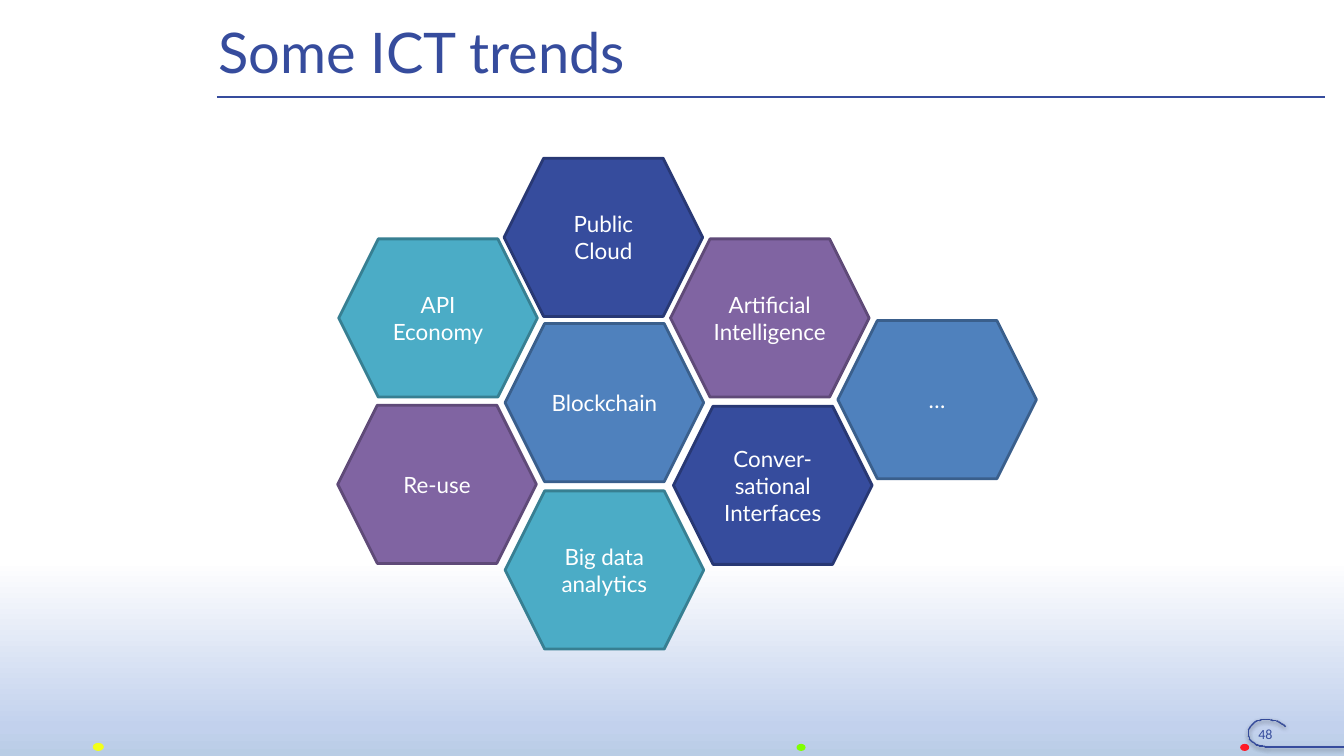
from dataclasses import dataclass
from itertools import pairwise
from pptx import Presentation
from pptx.dml.color import RGBColor
from pptx.enum.shapes import MSO_CONNECTOR as Connector, MSO_SHAPE as Preset
from pptx.enum.text import MSO_ANCHOR as Anchor, PP_ALIGN as Align
from pptx.oxml import parse_xml
from pptx.oxml.ns import nsdecls, qn
from pptx.util import Inches, Pt


@dataclass(frozen=True)
class Theme:
    navy: str = "364C9D"
    navy_edge: str = "283874"
    teal: str = "4BACC6"
    teal_edge: str = "377F92"
    blue: str = "4F81BD"
    blue_edge: str = "3A5F8C"
    purple: str = "8064A2"
    purple_edge: str = "5F4A78"
    white: str = "FFFFFF"
    red: str = "FF1A26"
    green: str = "80FF00"
    yellow: str = "F2FF1A"
    shadow: str = "000000"
    fade: tuple = ((0, "B9CDE5"), (15, "C2D1ED"), (100, "FFFFFF"))
    font: str = "Lato"
    number_font: str = "Calibri"
    title_size: int = 40
    label_size: int = 16
    number_size: int = 10


theme = Theme()


def style_text(para, size, color, font, align):
    para.alignment = align
    para.font.size = Pt(size)
    para.font.name = font
    para.font.color.rgb = RGBColor.from_string(color)


def add_solid(preset, left, top, width, height, fill):
    shape = page.shapes.add_shape(
        preset, Inches(left), Inches(top), Inches(width), Inches(height))
    shape.shadow.inherit = False
    shape.fill.solid()
    shape.fill.fore_color.rgb = RGBColor.from_string(fill)
    shape.line.fill.background()
    return shape


deck = Presentation()
deck.slide_width = Inches(13.33)
deck.slide_height = Inches(7.5)
page = deck.slides.add_slide(deck.slide_layouts[5])

fade = add_solid(Preset.RECTANGLE, 0, 5.56, 13.33, 1.94, theme.white)
fade.fill.gradient()
fade.fill.gradient_angle = 90
stops = fade._element.spPr.find(qn("a:gradFill")).find(qn("a:gsLst"))
stops.clear()
for position, color in theme.fade:
    stops.append(parse_xml(
        f'<a:gs {nsdecls("a")} pos="{position * 1000}"><a:srgbClr val="{color}"/></a:gs>'))

for left, top, width, height, color in (
    (12.3, 7.38, 0.09, 0.07, theme.red),
    (7.9, 7.38, 0.09, 0.07, theme.green),
    (0.92, 7.37, 0.11, 0.08, theme.yellow),
):
    add_solid(Preset.OVAL, left, top, width, height, color)

loop_points = (
    (12.75, 7.21), (12.73, 7.19), (12.71, 7.18), (12.68, 7.16), (12.66, 7.15),
    (12.63, 7.15), (12.6, 7.14), (12.58, 7.14), (12.56, 7.14), (12.53, 7.14),
    (12.51, 7.14), (12.49, 7.15), (12.47, 7.15), (12.45, 7.16), (12.44, 7.17),
    (12.42, 7.19), (12.41, 7.2), (12.4, 7.21), (12.39, 7.23), (12.38, 7.24),
    (12.38, 7.26), (12.38, 7.28), (12.38, 7.3), (12.39, 7.31), (12.39, 7.33),
    (12.4, 7.34), (12.41, 7.35), (12.42, 7.36), (12.44, 7.37), (12.45, 7.38),
    (12.46, 7.39), (12.48, 7.39), (12.49, 7.4), (12.51, 7.4), (12.52, 7.4),
    (12.53, 7.4), (12.55, 7.41), (12.56, 7.41), (12.57, 7.41), (13.33, 7.41),
)
loop_shadow = (
    f'<a:outerShdw blurRad="{Pt(3.1)}" dist="{Pt(1.6)}" dir="5400000" rotWithShape="0">'
    f'<a:srgbClr val="{theme.shadow}"><a:alpha val="38000"/></a:srgbClr></a:outerShdw>')
number_loop = page.shapes.add_group_shape()
lines = [(page, (2.15, 0.96), (13.14, 0.96), 1.5, "")]
lines += [(number_loop, start, end, 1, loop_shadow) for start, end in pairwise(loop_points)]
for parent, start, end, weight, effect in lines:
    line = parent.shapes.add_connector(
        Connector.STRAIGHT, *(Inches(length) for length in start + end))
    line.line.color.rgb = RGBColor.from_string(theme.navy)
    line.line.width = Pt(weight)
    line._element.spPr.append(parse_xml(
        f'<a:effectLst {nsdecls("a")}>{effect}</a:effectLst>'))

title = page.shapes.title
title.left, title.top = Inches(2.17), Inches(0.15)
title.width, title.height = Inches(10.98), Inches(0.72)
frame = title.text_frame
frame.text = "Some ICT trends"
frame.margin_left = 0
frame.vertical_anchor = Anchor.MIDDLE
style_text(frame.paragraphs[0], theme.title_size, theme.navy, theme.font, Align.LEFT)
page.shapes._spTree.append(title._element)

navy = (theme.navy, theme.navy_edge)
teal = (theme.teal, theme.teal_edge)
blue = (theme.blue, theme.blue_edge)
purple = (theme.purple, theme.purple_edge)
for label, left, top, (fill, edge) in (
    ("API Economy", 3.36, 2.37, teal),
    ("Blockchain", 5.01, 3.21, blue),
    ("Re-use", 3.35, 4.02, purple),
    ("Big data analytics", 5.01, 4.87, teal),
    ("Conver-sational Interfaces", 6.68, 4.03, navy),
    ("Artificial Intelligence", 6.65, 2.37, purple),
    ("Public Cloud", 5, 1.57, navy),
    ("…", 8.31, 3.18, blue),
):
    cell = add_solid(Preset.HEXAGON, left, top, 1.97, 1.57, fill)
    cell.line.color.rgb = RGBColor.from_string(edge)
    cell.line.width = Pt(2)
    frame = cell.text_frame
    frame.text = label
    frame.word_wrap = True
    frame.vertical_anchor = Anchor.MIDDLE
    style_text(frame.paragraphs[0], theme.label_size, theme.white, theme.font, Align.CENTER)

number_box = page.shapes.add_textbox(
    Inches(12.2), Inches(7.15), Inches(0.7), Inches(0.24))
frame = number_box.text_frame
frame.text = "48"
frame.word_wrap = True
style_text(frame.paragraphs[0], theme.number_size, theme.navy, theme.number_font, Align.CENTER)

deck.save("out.pptx")
